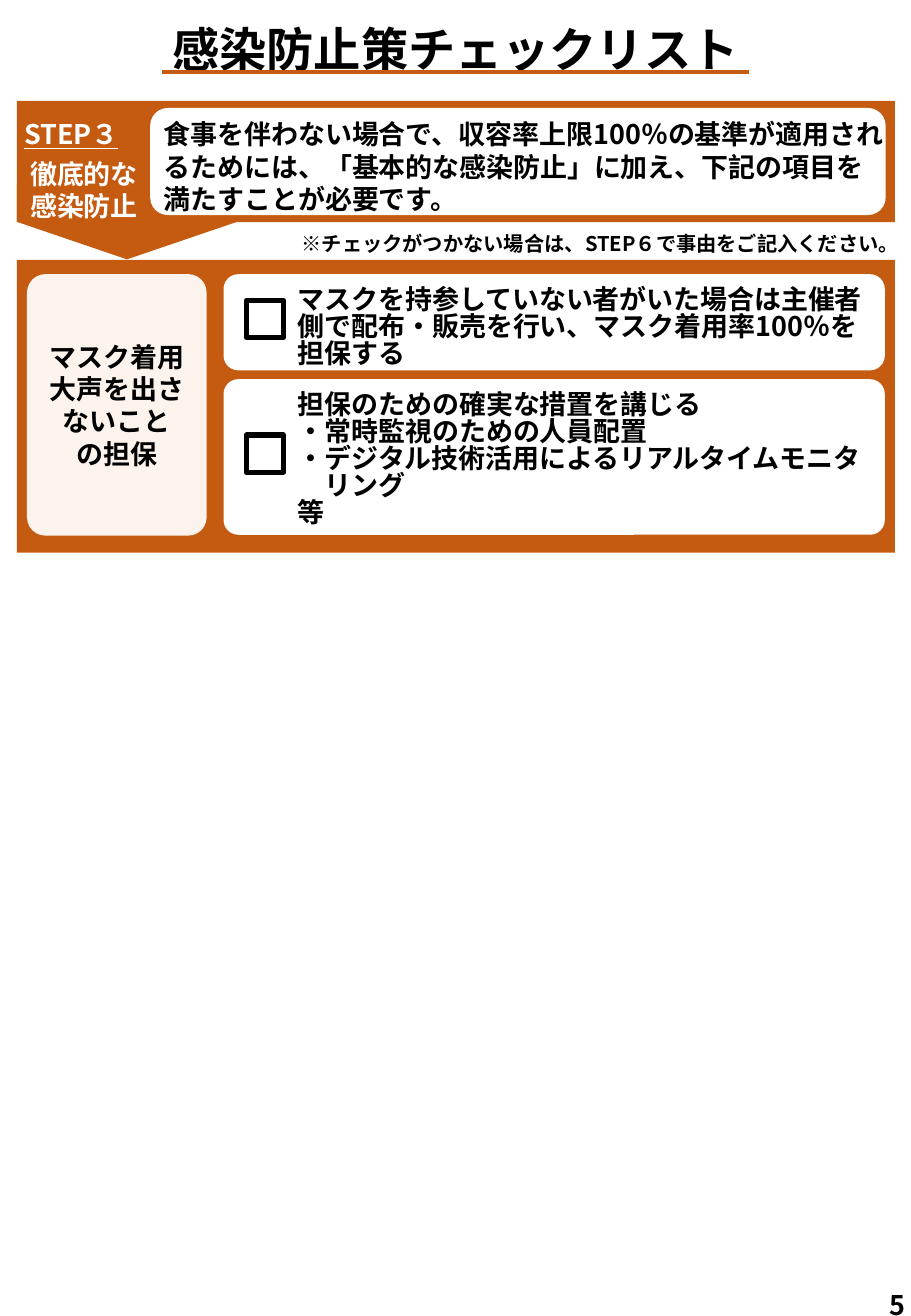
from lxml.etree import SubElement
from pptx import Presentation
from pptx.dml.color import RGBColor
from pptx.enum.shapes import MSO_CONNECTOR, MSO_SHAPE
from pptx.enum.text import MSO_ANCHOR, PP_ALIGN
from pptx.oxml.ns import qn
from pptx.util import Pt

FONT = "Noto Sans CJK JP"
COLORS = {"orange": "C55A11", "cream": "FDF3ED", "white": "FFFFFF", "black": "000000"}


def color(name):
    return RGBColor.from_string(COLORS[name])


def write(frame, lines, size=16, ink="black", align=PP_ALIGN.LEFT, spacing=None):
    frame.word_wrap = True
    frame.text = "\n".join(lines)
    for paragraph in frame.paragraphs:
        paragraph.alignment = align
        if spacing:
            paragraph.line_spacing = Pt(spacing)
        for run in paragraph.runs:
            font = run.font
            font.name, font.size, font.bold = FONT, Pt(size), True
            font.color.rgb = color(ink)
            SubElement(font._element, qn("a:ea")).set("typeface", FONT)


def indent(paragraph, points):
    paragraph._p.get_or_add_pPr().set("marL", str(Pt(points)))


def add_text(slide, box, lines, **style):
    frame = slide.shapes.add_textbox(*map(Pt, box)).text_frame
    write(frame, lines, **style)
    return frame


def add_panel(slide, box, fill, kind=MSO_SHAPE.RECTANGLE, radius=None):
    """Add a borderless shape; radius is the corner radius in points."""
    panel = slide.shapes.add_shape(kind, *map(Pt, box))
    panel.shadow.inherit = False
    panel.fill.solid()
    panel.fill.fore_color.rgb = color(fill)
    panel.line.fill.background()
    if radius:
        panel.adjustments[0] = radius / min(box[2:])
    return panel


def add_title(slide, box):
    left, top, width, height = box
    add_text(slide, box, ["感染防止策チェックリスト"], size=28, align=PP_ALIGN.CENTER)
    rule_y = top + 34
    rule = slide.shapes.add_connector(
        MSO_CONNECTOR.STRAIGHT, Pt(left + 61.5), Pt(rule_y), Pt(left + width - 61.5), Pt(rule_y))
    rule.line.color.rgb = color("orange")
    rule.line.width = Pt(2.25)
    SubElement(rule._element.spPr, qn("a:effectLst"))


def add_step_banner(slide, box):
    left, top, width, height = box
    arrow_depth, arrow_span = 44.5, 130.5
    # The quarter turn keeps the centre, so the frame is placed around it.
    center_x = left + arrow_span / 2
    center_y = top + height + 22 - arrow_depth / 2
    arrow = add_panel(
        slide, (center_x - arrow_depth / 2, center_y - arrow_span / 2, arrow_depth, arrow_span),
        "orange", MSO_SHAPE.PENTAGON)
    arrow.rotation = 90
    add_panel(slide, box, "orange")
    add_panel(slide, (left + 79, top + 4.25, width - 84.5, 63.5), "white",
              MSO_SHAPE.ROUNDED_RECTANGLE, radius=10.5)

    label = add_text(slide, (left - 2.8, top + 6.5, 86, 69),
                     ["STEP３", "徹底的な", "感染防止"], ink="white")
    step, *names = label.paragraphs
    step.runs[0].font.underline = True
    names[0].space_before = Pt(4.3)
    for name in names:
        indent(name, 3.6)

    add_text(slide, (left + 80, top + 6.5, 442, 65.5),
             ["食事を伴わない場合で、収容率上限100％の基準が適用されるためには、"
              "「基本的な感染防止」に加え、下記の項目を満たすことが必要です。"])


def add_check_item(slide, box, lines):
    left, top, width, height = box
    add_panel(slide, box, "white", MSO_SHAPE.ROUNDED_RECTANGLE, radius=8.8)
    side = 22
    tick_box = slide.shapes.add_shape(
        MSO_SHAPE.RECTANGLE, Pt(left + 13.5), Pt(top + (height - side) / 2 - 2),
        Pt(side), Pt(side))
    tick_box.shadow.inherit = False
    tick_box.fill.background()
    tick_box.line.color.rgb = color("black")
    tick_box.line.width = Pt(3)
    return add_text(slide, (left + 37, top + 4.6, 370, height - 4.6), lines, spacing=16)


def add_checklist(slide, box):
    left, top, width, height = box
    add_panel(slide, box, "orange")
    topic = add_panel(slide, (left + 6, top + 8.5, 106.5, 155), "cream",
                      MSO_SHAPE.ROUNDED_RECTANGLE, radius=10.9)
    frame = topic.text_frame
    frame.vertical_anchor = MSO_ANCHOR.MIDDLE
    frame.margin_left = frame.margin_right = Pt(5)
    frame.margin_top = frame.margin_bottom = Pt(3)
    write(frame, ["マスク着用", "大声を出さないこと", "の担保"], align=PP_ALIGN.CENTER)

    item_left, item_width = left + 122.5, width - 128.5
    add_check_item(slide, (item_left, top + 8.5, item_width, 57),
                   ["マスクを持参していない者がいた場合は主催者",
                    "側で配布・販売を行い、マスク着用率100％を",
                    "担保する"])
    measures = add_check_item(slide, (item_left, top + 70.75, item_width, 92.25),
                              ["担保のための確実な措置を講じる",
                               "・常時監視のための人員配置",
                               "・デジタル技術活用によるリアルタイムモニタ",
                               "リング",
                               "等"])
    indent(measures.paragraphs[3], 16)


def add_page_number(slide, box):
    frame = add_text(slide, box, ["5"])
    frame.margin_right = 0


def main():
    deck = Presentation()
    deck.slide_width, deck.slide_height = Pt(540), Pt(780)
    slide = deck.slides.add_slide(deck.slide_layouts[6])
    add_step_banner(slide, (10, 59.75, 520.5, 72))
    add_title(slide, (34.5, 8.5, 471, 41))
    add_checklist(slide, (10, 154, 520.5, 173.5))
    add_text(slide, (152.5, 132, 387.5, 24),
             ["※チェックがつかない場合は、STEP６で事由をご記入ください。"],
             size=12, align=PP_ALIGN.RIGHT, spacing=16)
    add_page_number(slide, (520, 760.3, 20, 19.7))
    deck.save("out.pptx")


if __name__ == "__main__":
    main()
